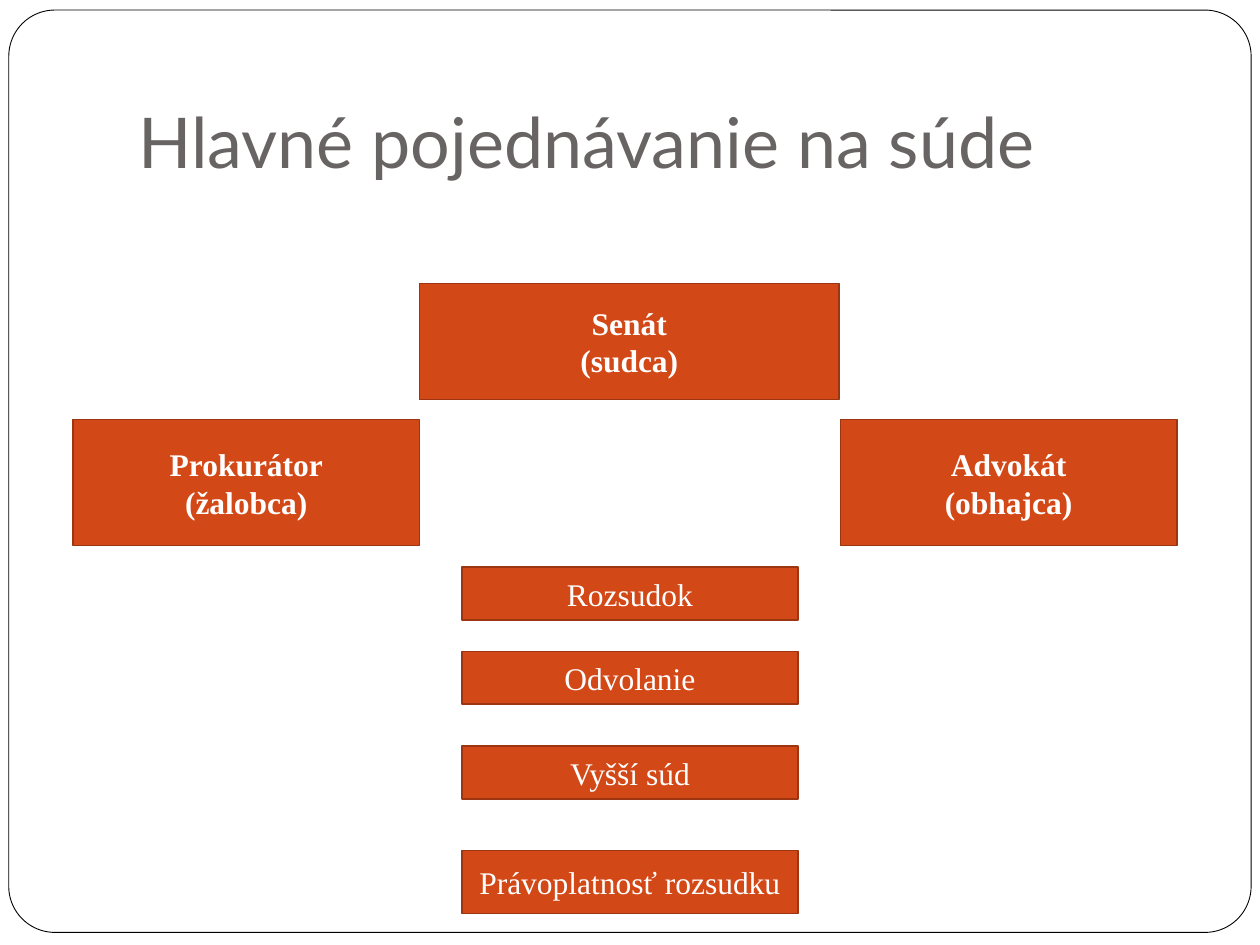
"""Build a slide showing the parties and stages of a main court hearing."""
from pptx import Presentation
from pptx.dml.color import RGBColor
from pptx.enum.shapes import MSO_SHAPE
from pptx.enum.text import MSO_ANCHOR, PP_ALIGN
from pptx.util import Inches, Pt

RECTANGLE, ROUNDED = MSO_SHAPE.RECTANGLE, MSO_SHAPE.ROUNDED_RECTANGLE
MIDDLE, BOTTOM = MSO_ANCHOR.MIDDLE, MSO_ANCHOR.BOTTOM
LEFT, CENTER = PP_ALIGN.LEFT, PP_ALIGN.CENTER

TITLE = "Hlavné pojednávanie na súde"
PARTIES = [
    ("Senát\n(sudca)", (3.33, 2.25, 3.33, 0.92)),
    ("Prokurátor\n(žalobca)", (0.58, 3.33, 2.75, 1)),
    ("Advokát\n(obhajca)", (6.67, 3.33, 2.67, 1)),
]
STAGES = [
    ("Rozsudok", 4.5, 0.42),
    ("Odvolanie", 5.17, 0.42),
    ("Vyšší súd", 5.92, 0.42),
    ("Právoplatnosť rozsudku", 6.75, 0.5),
]
SLIDE_WIDTH, SLIDE_HEIGHT = 10, 7.5
STAGE_WIDTH = 2.67
THEME = {
    "paper": "FFFFFF", "frame": "000000", "title": "696464",
    "box": "D34817", "edge": "9C3511", "box_text": "FFFFFF",
    "title_font": "Lato", "box_font": "Times New Roman",
    "title_size": 40, "box_size": 18,
}


def color(name):
    return RGBColor.from_string(THEME[name])


def add_shape(slide, kind, bounds, fill, line, line_width):
    shape = slide.shapes.add_shape(kind, *map(Inches, bounds))
    shape.shadow.inherit = False
    shape.fill.solid()
    shape.fill.fore_color.rgb = color(fill)
    shape.line.color.rgb = color(line)
    shape.line.width = Pt(line_width)
    return shape


def write(shape, text, style, text_color, alignment, anchor, bold=False):
    frame = shape.text_frame
    frame.text = text
    frame.word_wrap = True
    frame.vertical_anchor = anchor
    for paragraph in frame.paragraphs:
        paragraph.alignment = alignment
        for run in paragraph.runs:
            run.font.name = THEME[style + "_font"]
            run.font.size = Pt(THEME[style + "_size"])
            run.font.bold = bold
            run.font.color.rgb = color(text_color)


def add_box(slide, text, bounds, bold):
    box = add_shape(slide, RECTANGLE, bounds, "box", "edge", 1)
    write(box, text, "box", "box_text", CENTER, MIDDLE, bold)


def main():
    presentation = Presentation()
    presentation.slide_width = Inches(SLIDE_WIDTH)
    presentation.slide_height = Inches(SLIDE_HEIGHT)
    slide = presentation.slides.add_slide(presentation.slide_layouts[6])

    frame = add_shape(slide, ROUNDED, (0.07, 0.08, 9.86, 7.32), "paper", "frame", 0.5)
    frame.adjustments[0] = 0.05

    title = slide.shapes.add_textbox(*map(Inches, (1, 0.3, 8.5, 1.25)))
    title.text_frame.margin_bottom = Inches(0.1)
    write(title, TITLE, "title", "title", LEFT, BOTTOM)

    for text, bounds in PARTIES:
        add_box(slide, text, bounds, True)
    stage_left = (SLIDE_WIDTH - STAGE_WIDTH) / 2
    for text, top, height in STAGES:
        add_box(slide, text, (stage_left, top, STAGE_WIDTH, height), False)

    presentation.save("out.pptx")


if __name__ == "__main__":
    main()
